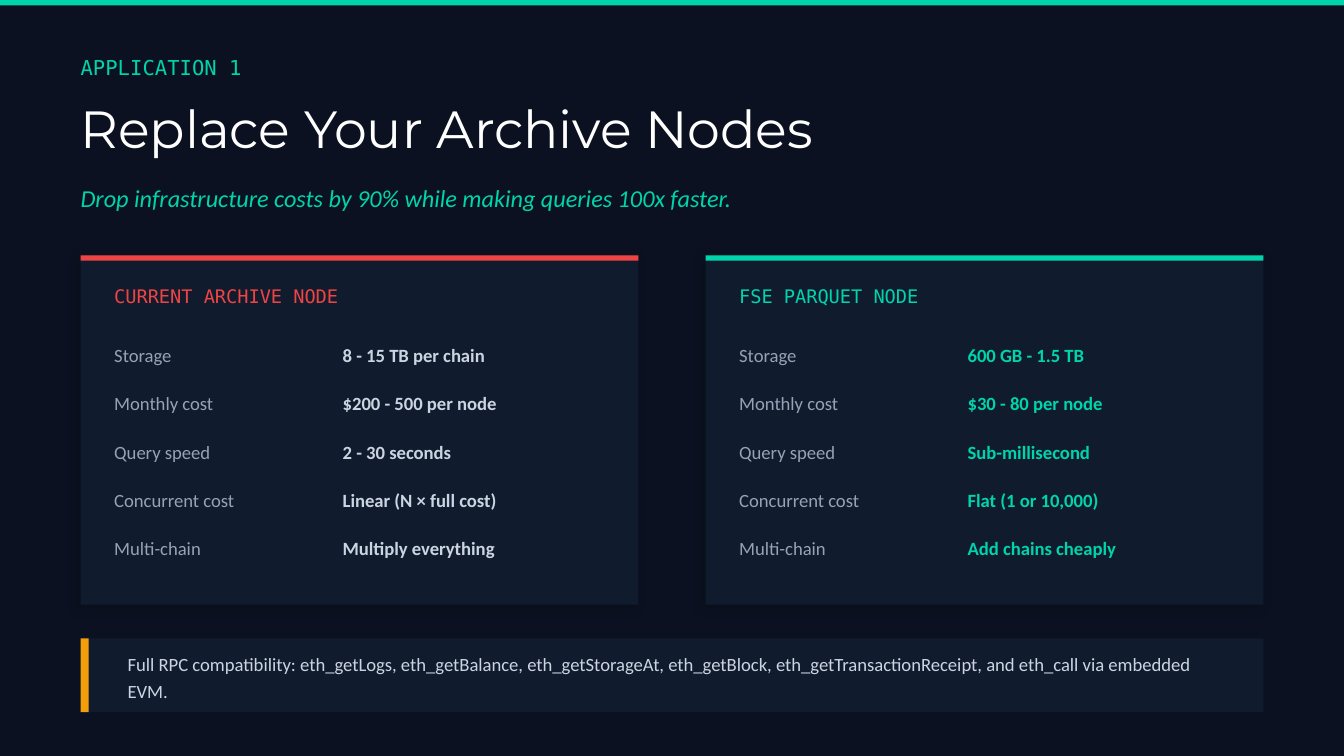
"""Build the slide that compares an archive node with a Parquet node."""
from dataclasses import dataclass

from lxml.etree import SubElement as Sub
from pptx import Presentation as Deck
from pptx.dml.color import RGBColor as Rgb
from pptx.enum.shapes import MSO_SHAPE as Form
from pptx.enum.text import MSO_ANCHOR as Anchor
from pptx.oxml.ns import qn
from pptx.shapes.autoshape import Shape
from pptx.slide import Slide
from pptx.util import Inches, Pt


@dataclass(frozen=True)
class Theme:
    back: str = "0B1120"
    panel: str = "111B2E"
    mint: str = "00D4AA"
    red: str = "EF4444"
    amber: str = "F59E0B"
    white: str = "FFFFFF"
    pale: str = "CBD5E1"
    grey: str = "94A3B8"
    shade: str = "000000"
    body: str = "Calibri"
    mono: str = "DejaVu Sans Mono"
    head: str = "Montserrat"
    small: int = 10
    label: int = 11
    lead: int = 13
    title: int = 28


@dataclass(frozen=True)
class Box:
    left: float
    top: float
    width: float
    height: float


@dataclass(frozen=True)
class Style:
    font: str
    size: int
    color: str
    bold: bool = False
    slant: bool = False
    lines: float | None = None


@dataclass(frozen=True)
class Card:
    left: float
    title: str
    accent: str
    color: str
    values: tuple[str, ...]


THEME = Theme()
EDGE, WIDE, BAR = 0.6, 8.8, 0.04
TOP, STEP = 1.9, 0.36
NAMES = ("Storage", "Monthly cost", "Query speed", "Concurrent cost", "Multi-chain")
CARDS = (
    Card(EDGE, "CURRENT ARCHIVE NODE", THEME.red, THEME.pale,
         ("8 - 15 TB per chain", "$200 - 500 per node", "2 - 30 seconds",
          "Linear (N × full cost)", "Multiply everything")),
    Card(5.25, "FSE PARQUET NODE", THEME.mint, THEME.mint,
         ("600 GB - 1.5 TB", "$30 - 80 per node", "Sub-millisecond",
          "Flat (1 or 10,000)", "Add chains cheaply")),
)
NOTE = ("Full RPC compatibility: eth_getLogs, eth_getBalance, eth_getStorageAt, "
        "eth_getBlock, eth_getTransactionReceipt, and eth_call via embedded EVM.")


def place(box: Box) -> tuple[Inches, ...]:
    """Turn a box into the four lengths that a shape needs."""
    return tuple(Inches(n) for n in (box.left, box.top, box.width, box.height))


def block(slide: Slide, box: Box, color: str) -> Shape:
    """Draw a plain filled rectangle."""
    shape = slide.shapes.add_shape(Form.RECTANGLE, *place(box))
    shape.shadow.inherit = False
    shape.fill.solid()
    shape.fill.fore_color.rgb = Rgb.from_string(color)
    shape.line.fill.background()
    return shape


def shade(shape: Shape) -> None:
    """Give a shape a soft shadow."""
    effects = shape._element.spPr.find(qn("a:effectLst"))
    outer = Sub(effects, qn("a:outerShdw"), blurRad=str(Pt(6)), dist=str(Pt(2)),
                dir=str(135 * 60000), algn="bl", rotWithShape="0")
    color = Sub(outer, qn("a:srgbClr"), val=THEME.shade)
    Sub(color, qn("a:alpha"), val="15000")


def write(slide: Slide, box: Box, text: str, style: Style) -> None:
    """Add one paragraph in a box without margins."""
    frame = slide.shapes.add_textbox(*place(box)).text_frame
    frame.word_wrap = True
    frame.vertical_anchor = Anchor.MIDDLE
    frame.margin_left = frame.margin_right = Inches(0)
    frame.margin_top = frame.margin_bottom = Inches(0)
    para = frame.paragraphs[0]
    para.text = text
    para.line_spacing = style.lines
    font = para.font
    font.name, font.size = style.font, Pt(style.size)
    font.bold, font.italic = style.bold, style.slant
    font.color.rgb = Rgb.from_string(style.color)


def draw(slide: Slide, card: Card) -> None:
    """Draw a card with its title and its rows."""
    shade(block(slide, Box(card.left, TOP, 4.15, 2.6), THEME.panel))
    block(slide, Box(card.left, TOP, 4.15, BAR), card.accent)
    left = card.left + 0.25
    write(slide, Box(left, TOP + 0.15, 3.5, 0.3), card.title,
          Style(THEME.mono, THEME.small, card.accent))
    key = Style(THEME.body, THEME.small, THEME.grey)
    fact = Style(THEME.body, THEME.small, card.color, bold=True)
    for row, (name, value) in enumerate(zip(NAMES, card.values)):
        top = TOP + 0.6 + row * STEP
        write(slide, Box(left, top, 1.65, 0.28), name, key)
        write(slide, Box(left + 1.7, top, 1.9, 0.28), value, fact)


def main() -> None:
    """Build and save the deck."""
    deck = Deck()
    deck.slide_width = Inches(10)
    deck.slide_height = Inches(10 * 9 / 16)
    slide = deck.slides.add_slide(deck.slide_layouts[6])
    slide.background.fill.solid()
    slide.background.fill.fore_color.rgb = Rgb.from_string(THEME.back)

    block(slide, Box(0, 0, 10, BAR), THEME.mint)
    write(slide, Box(EDGE, 0.3, 8, 0.4), "APPLICATION 1",
          Style(THEME.mono, THEME.label, THEME.mint))
    write(slide, Box(EDGE, 0.65, WIDE, 0.6), "Replace Your Archive Nodes",
          Style(THEME.head, THEME.title, THEME.white))
    write(slide, Box(EDGE, 1.3, 8, 0.35),
          "Drop infrastructure costs by 90% while making queries 100x faster.",
          Style(THEME.body, THEME.lead, THEME.mint, slant=True))
    for card in CARDS:
        draw(slide, card)

    block(slide, Box(EDGE, 4.75, WIDE, 0.55), THEME.panel)
    block(slide, Box(EDGE, 4.75, 0.06, 0.55), THEME.amber)
    write(slide, Box(0.95, 4.75, 8.2, 0.55), NOTE,
          Style(THEME.body, THEME.small, THEME.pale, lines=1.2))
    deck.save("out.pptx")


if __name__ == "__main__":
    main()
